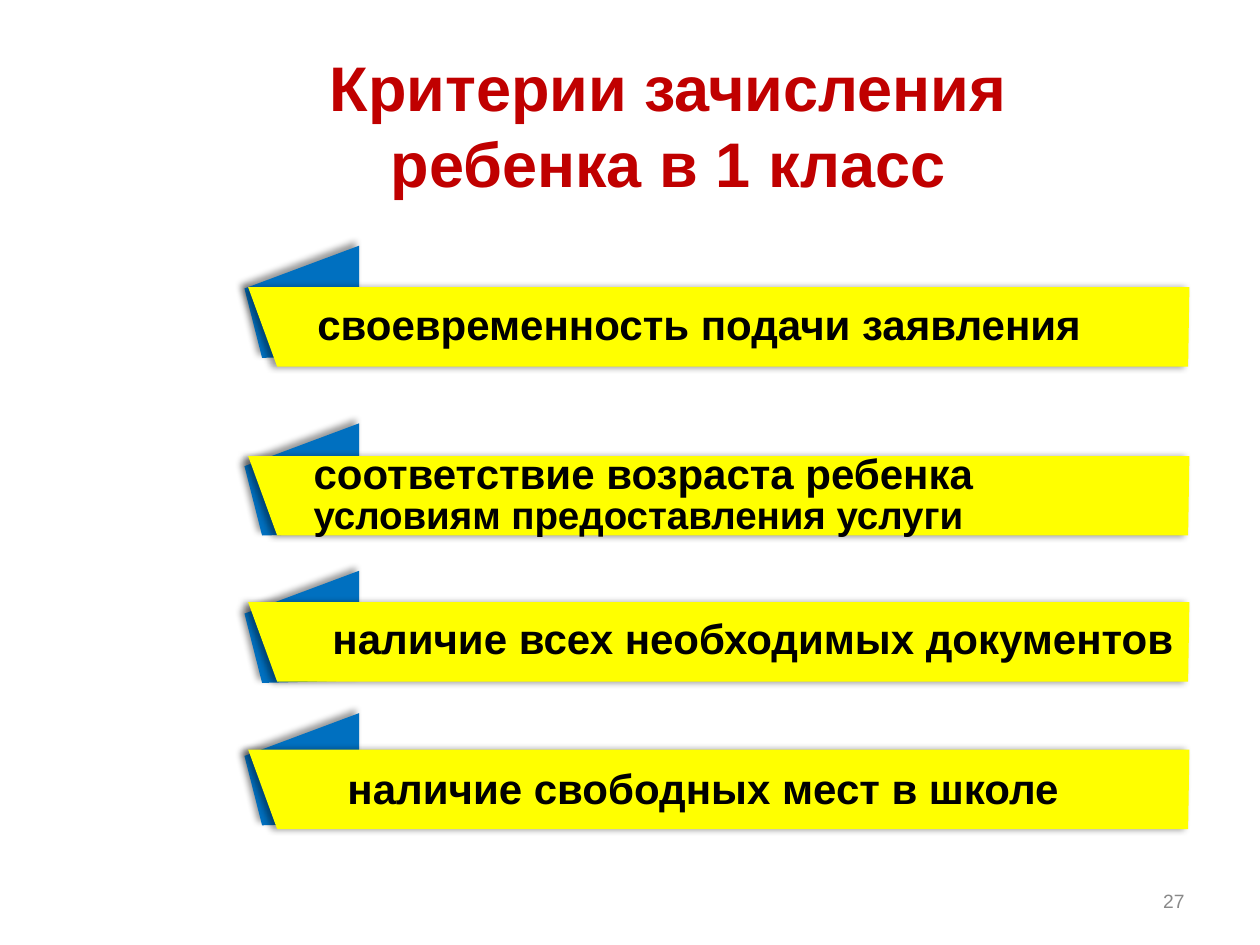
"""Build the slide on the criteria for admission to first grade."""
from dataclasses import dataclass

from lxml import etree
from pptx import Presentation
from pptx.dml.color import RGBColor
from pptx.enum import text as t
from pptx.oxml import ns
from pptx.util import Inches, Pt


@dataclass(frozen=True)
class Theme:
    """Colours, font and type sizes of the slide."""
    font: str = "Arial"
    title: str = "C00000"
    ink: str = "000000"
    grey: str = "898989"
    fold: str = "0070C0"
    band: str = "FFFF00"
    head: int = 36
    large: int = 24
    small: int = 22
    note: int = 11


THEME = Theme()
ITEMS = [
    (1.95, 2.28, (2.42, 2.32, 7.38, 0.51), None,
     [("своевременность подачи заявления", THEME.large)]),
    (3.36, 3.62, (2.39, 3.6, 7.4, 0.72), 22,
     [("соответствие возраста ребенка", THEME.large),
      ("условиям предоставления услуги", THEME.small)]),
    (4.53, 4.78, (2.54, 4.92, 7.1, 0.4), 21,
     [("наличие всех необходимых документов", THEME.large)]),
    (5.66, 5.95, (2.66, 6, 7.34, 0.51), None,
     [("наличие свободных мест в школе", THEME.large)]),
]


def place(shape, box):
    """Move and size a shape, in inches."""
    shape.left, shape.top, shape.width, shape.height = map(Inches, box)


def write(shape, lines, color=THEME.ink, bold=True, align=t.PP_ALIGN.LEFT,
          anchor=t.MSO_ANCHOR.TOP, pitch=None):
    """Fill a shape with one paragraph of (text, size) lines."""
    frame = shape.text_frame
    frame.word_wrap = True
    frame.vertical_anchor = anchor
    para = frame.paragraphs[0]
    para.alignment = align
    if pitch:
        para.line_spacing = Pt(pitch)
    for i, (words, size) in enumerate(lines):
        if i:
            para.add_line_break()
        run = para.add_run()
        run.text = words
        run.font.name, run.font.size, run.font.bold = THEME.font, Pt(size), bold
        run.font.color.rgb = RGBColor.from_string(color)


def shade(shape, angle):
    """Give a shape a soft black shadow cast at an angle in degrees."""
    shape.shadow.inherit = False
    effects = shape.element.spPr.find(ns.qn("a:effectLst"))
    outer = etree.SubElement(
        effects, ns.qn("a:outerShdw"), blurRad=str(Pt(4)), dist=str(Pt(3)),
        dir=str(angle * 60000), algn="ctr", rotWithShape="0")
    black = etree.SubElement(outer, ns.qn("a:srgbClr"), val=THEME.ink)
    etree.SubElement(black, ns.qn("a:alpha"), val="40000")


def draw(slide, points, top, color, angle):
    """Draw a shadowed polygon whose points are measured down from top."""
    dots = [(Inches(x), Inches(top + y)) for x, y in points]
    pen = slide.shapes.build_freeform(*dots[0])
    pen.add_line_segments(dots[1:], close=True)
    shape = pen.convert_to_shape()
    shape.fill.solid()
    shape.fill.fore_color.rgb = RGBColor.from_string(color)
    shape.line.fill.background()
    shade(shape, angle)


def label(slide, box, lines, **style):
    """Add a text box with formatted lines."""
    shape = slide.shapes.add_textbox(*map(Inches, box))
    write(shape, lines, **style)


def ribbon(slide, fold, band, box, pitch, lines):
    """Add a folded ribbon with its caption."""
    draw(slide, [(1.94, 0.34), (2.85, 0), (2.85, 0.87), (2.08, 0.89)],
         fold, THEME.fold, 225)
    draw(slide, [(1.97, 0), (2.2, 0.63), (9.43, 0.63), (9.44, 0)],
         band, THEME.band, 180)
    label(slide, box, lines, pitch=pitch)


def main():
    """Build and save the slide."""
    deck = Presentation()
    deck.slide_width, deck.slide_height = Inches(10), Inches(7.5)
    slide = deck.slides.add_slide(deck.slide_layouts[5])
    title = slide.shapes.title
    place(title, (1.46, 0.36, 7.69, 1.25))
    write(title, [("Критерии зачисления ребенка в 1 класс", THEME.head)],
          color=THEME.title, align=t.PP_ALIGN.CENTER, anchor=t.MSO_ANCHOR.MIDDLE)
    label(slide, (7.17, 6.95, 2.33, 0.4), [("27", THEME.note)],
          color=THEME.grey, bold=False, align=t.PP_ALIGN.RIGHT,
          anchor=t.MSO_ANCHOR.MIDDLE)
    for item in ITEMS:
        ribbon(slide, *item)
    deck.save("out.pptx")


if __name__ == "__main__":
    main()
